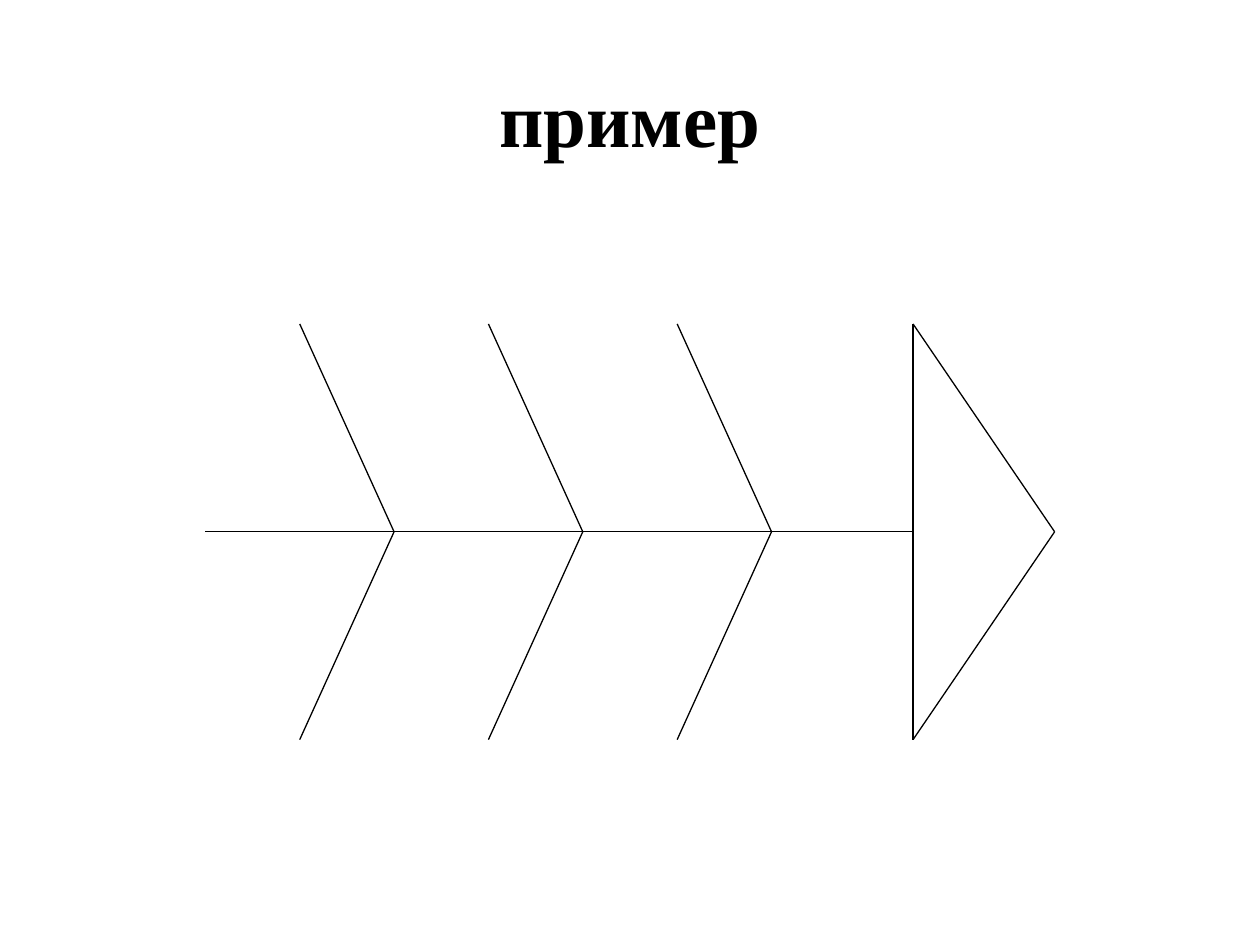
from lxml import etree
from pptx import Presentation
from pptx.dml.color import RGBColor
from pptx.enum.shapes import MSO_CONNECTOR
from pptx.enum.text import MSO_ANCHOR, PP_ALIGN
from pptx.oxml.ns import qn
from pptx.util import Cm, Pt

BLACK = RGBColor(0, 0, 0)
STRAIGHT = MSO_CONNECTOR.STRAIGHT
MIDDLE = MSO_ANCHOR.MIDDLE
CENTER = PP_ALIGN.CENTER

TITLE_BOX = (Cm(1.27), Cm(0.76), Cm(22.86), Cm(3.18))
FISHBONE_BOX = (Cm(4.14), Cm(6.53), Cm(17.12), Cm(8.38))


def add_title(page, box, text):
    title = page.shapes.title
    title.left, title.top, title.width, title.height = box
    frame = title.text_frame
    frame.text = text
    frame.vertical_anchor = MIDDLE
    para = frame.paragraphs[0]
    para.alignment = CENTER
    para.font.name = "Times New Roman"
    para.font.size = Pt(44)
    para.font.bold = True
    para.font.color.rgb = BLACK


def add_line(group, start, end):
    line = group.shapes.add_connector(STRAIGHT, *start, *end)
    line.line.color.rgb = BLACK
    line.line.width = Pt(0.75)
    etree.SubElement(line._element.spPr, qn("a:effectLst"))


def add_fishbone(page, box):
    left, top, width, height = box
    middle, bottom = top + height // 2, top + height
    group = page.shapes.add_group_shape()

    def column(step):
        """Horizontal position on a grid of nine steps across the box."""
        return int(left + width * step / 9)

    # Spine
    head = column(7.5)
    add_line(group, (left, middle), (head, middle))

    # Triangular head
    tip = (column(9), middle)
    add_line(group, (head, top), (head, bottom))
    add_line(group, (head, top), tip)
    add_line(group, tip, (head, bottom))

    # Pairs of ribs, each meeting the spine one step to the right
    for joint in (2, 4, 6):
        for edge in (top, bottom):
            add_line(group, (column(joint - 1), edge), (column(joint), middle))


def main():
    deck = Presentation()
    deck.slide_width, deck.slide_height = Cm(25.4), Cm(19.05)
    page = deck.slides.add_slide(deck.slide_layouts[5])
    add_title(page, TITLE_BOX, "пример")
    add_fishbone(page, FISHBONE_BOX)
    deck.save("out.pptx")


if __name__ == "__main__":
    main()
